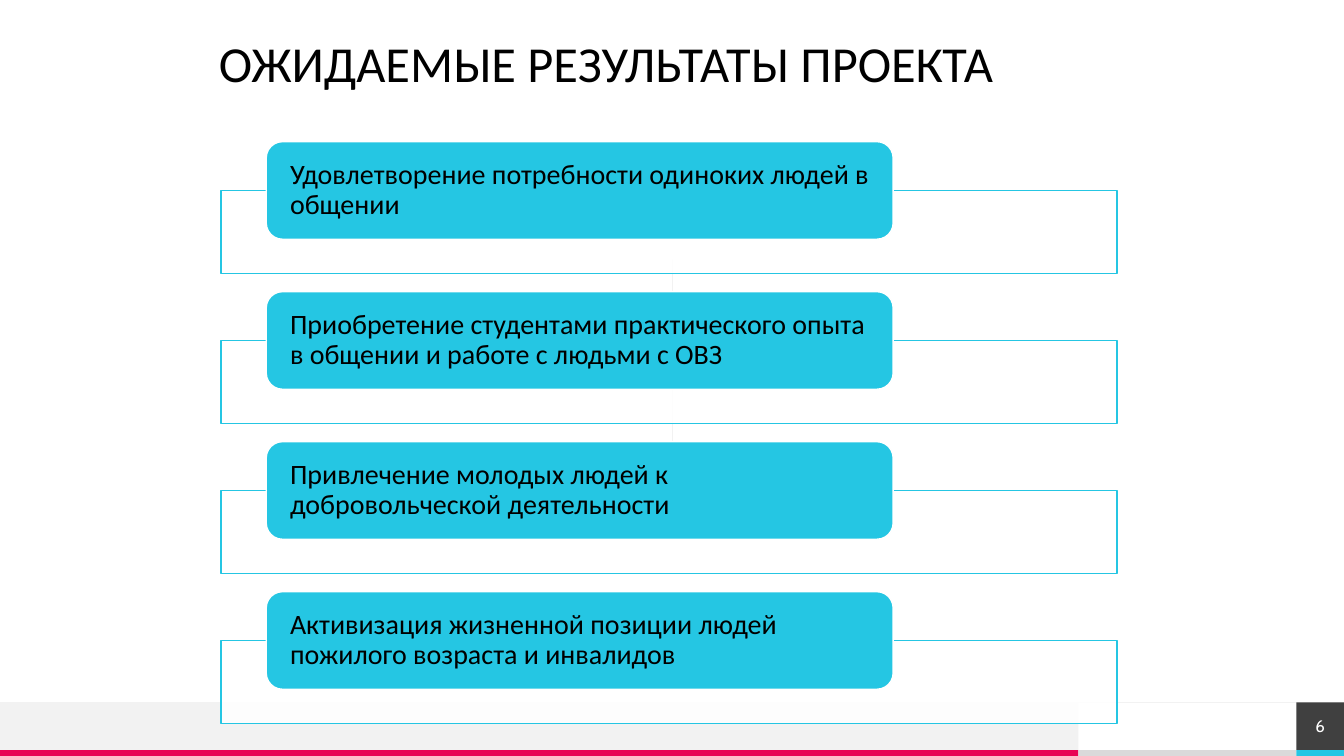
from lxml.etree import SubElement
from pptx import Presentation
from pptx.dml.color import RGBColor
from pptx.enum.shapes import MSO_CONNECTOR, MSO_SHAPE
from pptx.enum.text import MSO_ANCHOR as Anchor, PP_ALIGN as Align
from pptx.oxml.ns import qn
from pptx.util import Cm, Pt

TITLE = "ОЖИДАЕМЫЕ РЕЗУЛЬТАТЫ ПРОЕКТА "
RESULTS = [
    "Удовлетворение потребности одиноких людей в общении",
    "Приобретение студентами практического опыта в общении и работе с людьми с ОВЗ",
    "Привлечение молодых людей к добровольческой деятельности",
    "Активизация жизненной позиции людей пожилого возраста и инвалидов",
]
PAGE = "6"

THEME = {
    "cyan": "25C6E3", "pink": "E80554", "dark": "404040", "pale": "F2F2F2",
    "grey": "DADADA", "white": "FFFFFF", "black": "000000",
    "body": "Calibri", "accent": "Cabin",
    "title": 36, "result": 20, "page": 12,
}

# Lengths in centimetres
WIDTH, HEIGHT = 33.87, 19.05
STRIP = 0.15
FOOT_TOP, FOOT_H = 17.7, 1.2
FOOT_SPLIT, PAGE_LEFT = 27.18, 32.67
FRAME = (5.57, 4.8, 22.58, 2.1)
CARD = (6.71, 3.57, 15.8, 2.46)
PITCH = 3.78


def rgb(name):
    return RGBColor.from_string(THEME[name])


def add_box(s, box, fill, line=None, shape=MSO_SHAPE.RECTANGLE, alpha=None):
    sp = s.shapes.add_shape(shape, *map(Cm, box))
    sp.shadow.inherit = False
    sp.fill.solid()
    sp.fill.fore_color.rgb = rgb(fill)
    if alpha:
        color = sp.fill._xPr.find(qn("a:solidFill"))[0]
        SubElement(color, qn("a:alpha")).set("val", str(alpha * 1000))
    if line:
        sp.line.color.rgb = rgb(line)
        sp.line.width = Pt(1)
    else:
        sp.line.fill.background()
    return sp


def add_rule(s, x1, y1, x2, y2):
    line = s.shapes.add_connector(MSO_CONNECTOR.STRAIGHT, *map(Cm, (x1, y1, x2, y2)))
    line.line.color.rgb = rgb("pale")
    line.line.width = Pt(0.5)
    SubElement(line._element.spPr, qn("a:effectLst"))


def set_text(sp, text, size, font, color, align, anchor, insets, spacing=None):
    tf = sp.text_frame
    left, top, right, bottom = map(Cm, insets)
    frame = {"word_wrap": True, "vertical_anchor": anchor, "margin_left": left,
             "margin_top": top, "margin_right": right, "margin_bottom": bottom}
    for key, value in frame.items():
        setattr(tf, key, value)
    p = tf.paragraphs[0]
    p.alignment = align
    p.line_spacing = spacing
    r = p.add_run()
    r.text = text
    style = {"size": Pt(THEME[size]), "name": THEME[font]}
    for key, value in style.items():
        setattr(r.font, key, value)
    r.font.color.rgb = rgb(color)


def add_footer(s):
    add_box(s, (0, FOOT_TOP, FOOT_SPLIT, FOOT_H), "pale")
    strip = [(0, FOOT_SPLIT, "pink"), (FOOT_SPLIT, PAGE_LEFT, "grey"),
             (PAGE_LEFT, WIDTH, "cyan")]
    for left, right, color in strip:
        add_box(s, (left, HEIGHT - STRIP, right - left, STRIP), color)
    add_rule(s, WIDTH, FOOT_TOP, 0, FOOT_TOP)

    sp = add_box(s, (PAGE_LEFT, FOOT_TOP, WIDTH - PAGE_LEFT, FOOT_H), "dark")
    set_text(sp, PAGE, "page", "accent", "white",
             Align.CENTER, Anchor.MIDDLE, (0, 0, 0, 0))


def add_result(s, index, text):
    def shifted(box):
        left, top, width, height = box
        return left, top + index * PITCH, width, height

    add_box(s, shifted(FRAME), "white", "cyan", alpha=90)
    sp = add_box(s, shifted(CARD), "cyan", "white", MSO_SHAPE.ROUNDED_RECTANGLE)
    set_text(sp, text, "result", "body", "black",
             Align.LEFT, Anchor.MIDDLE, (0.48, 0, 0.48, 0), 0.9)


def main():
    prs = Presentation()
    prs.slide_width, prs.slide_height = Cm(WIDTH), Cm(HEIGHT)
    s = prs.slides.add_slide(prs.slide_layouts[6])

    add_footer(s)
    add_rule(s, WIDTH / 2, 6.55, WIDTH / 2, 13.26)
    for i, text in enumerate(RESULTS):
        add_result(s, i, text)

    sp = s.shapes.add_textbox(*map(Cm, (3.81, 0.69, 23.22, 1.8)))
    set_text(sp, TITLE, "title", "body", "black",
             Align.CENTER, Anchor.TOP, (0.25, 0.13, 0.25, 0.13))

    prs.save("out.pptx")


if __name__ == "__main__":
    main()
